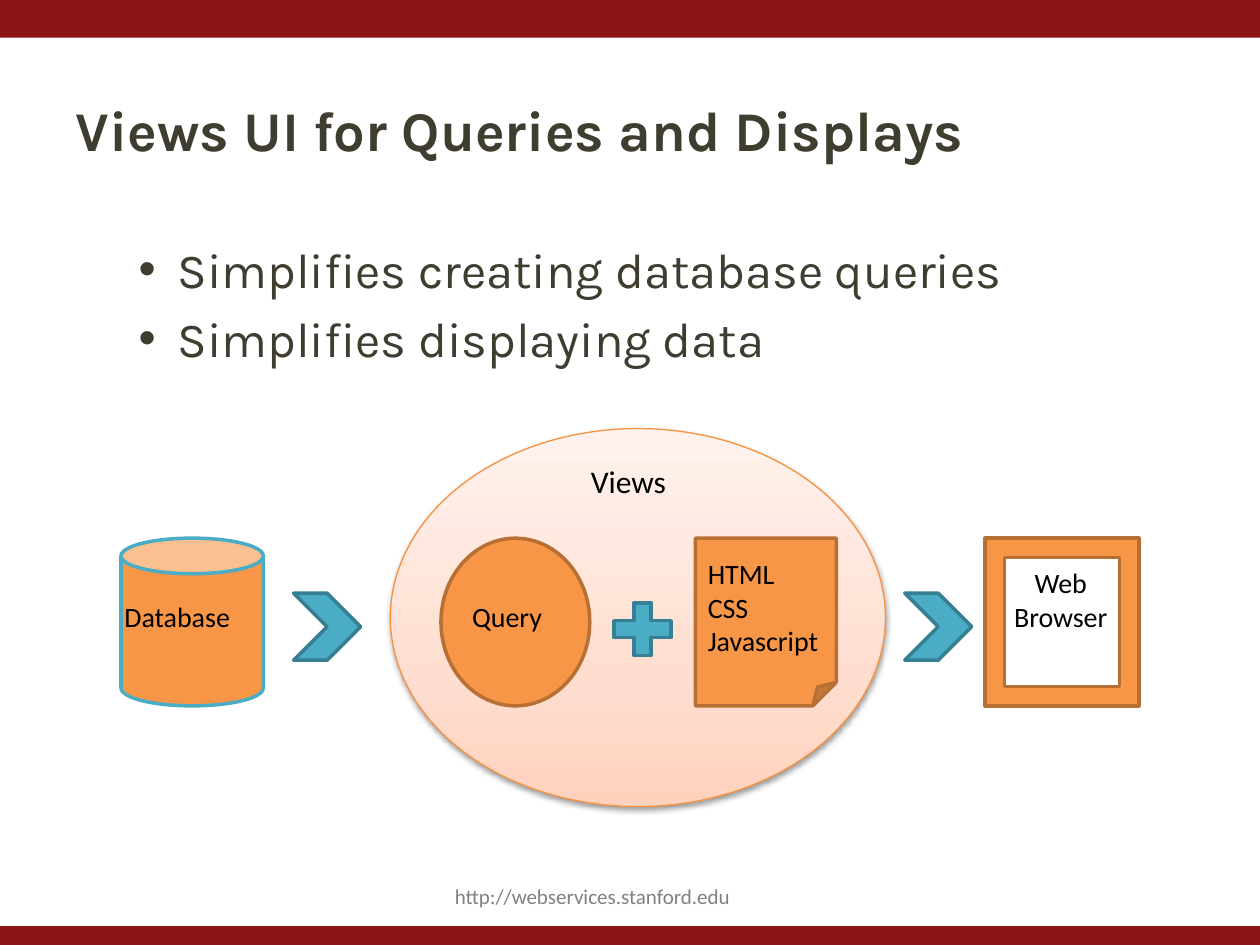
from lxml import etree
from pptx import Presentation
from pptx.dml.color import RGBColor
from pptx.enum import shapes, text
from pptx.oxml import parse_xml
from pptx.oxml.ns import nsdecls, qn
from pptx.util import Cm, Pt

CARDINAL = RGBColor(0x8C, 0x15, 0x15)
CHARCOAL = RGBColor(0x3F, 0x3C, 0x30)
GREY = RGBColor(0x80, 0x80, 0x80)
BLACK = RGBColor(0, 0, 0)
ORANGE = RGBColor(0xF7, 0x96, 0x46)
BROWN = RGBColor(0xB7, 0x6F, 0x34)
RIM = RGBColor(0xF6, 0x92, 0x40)
TEAL = RGBColor(0x4B, 0xAC, 0xC6)
DARK_TEAL = RGBColor(0x37, 0x7F, 0x92)
PEACH_STOPS = [(0, RGBColor(0xFF, 0xD2, 0xBD)),
               (35, RGBColor(0xFF, 0xDE, 0xD0)),
               (100, RGBColor(0xFF, 0xF2, 0xED))]

KIND = shapes.MSO_SHAPE
LEFT, CENTER = text.PP_ALIGN.LEFT, text.PP_ALIGN.CENTER
STAGE_TOP, STAGE_HEIGHT = 10.85, 3.38
SYMBOL_TOP = 11.96


def write(frame, lines, size, color=BLACK, font="Calibri", bold=False,
          align=LEFT, bullet=False):
    """Fill a text frame with one paragraph per line."""
    for index, line in enumerate(lines):
        para = frame.paragraphs[0] if index == 0 else frame.add_paragraph()
        para.text = line
        para.alignment = align
        if bullet:
            para.level = 1
            props = para._p.get_or_add_pPr()
            props.set("marL", str(Cm(2.06)))
            props.set("indent", str(Cm(-0.79)))
            if index:
                space = etree.SubElement(props, qn("a:spcBef"))
                etree.SubElement(space, qn("a:spcPct")).set("val", "20000")
            else:
                para.space_before = Pt(0)
            etree.SubElement(props, qn("a:buFont")).set("typeface", "Arial")
            etree.SubElement(props, qn("a:buChar")).set("char", "•")
        para.font.size = Pt(size)
        para.font.name = font
        para.font.bold = bold
        para.font.color.rgb = color


def fill_placeholder(holder, box, lines, anchor, **style):
    holder.left, holder.top, holder.width, holder.height = map(Cm, box)
    frame = holder.text_frame
    frame.auto_size = text.MSO_AUTO_SIZE.NONE
    frame.vertical_anchor = anchor
    write(frame, lines, color=CHARCOAL, font="Karla", **style)


def add_label(slide, box, lines, size=16, wrap=False, **style):
    frame = slide.shapes.add_textbox(*map(Cm, box)).text_frame
    frame.word_wrap = wrap
    frame.auto_size = text.MSO_AUTO_SIZE.SHAPE_TO_FIT_TEXT
    write(frame, lines, size, **style)


def add_block(slide, kind, box, fill, line=None, weight=2):
    block = slide.shapes.add_shape(kind, *map(Cm, box))
    block.shadow.inherit = False
    block.fill.solid()
    block.fill.fore_color.rgb = fill
    if line is None:
        block.line.fill.background()
    else:
        block.line.color.rgb = line
        block.line.width = Pt(weight)
    return block


def add_views_oval(slide):
    """Large oval with a peach gradient and a soft shadow below."""
    oval = add_block(slide, KIND.OVAL, (7.87, 8.64, 9.98, 7.62),
                     ORANGE, RIM, 0.75)
    oval.fill.gradient()
    oval.fill.gradient_angle = 90
    props = oval._element.spPr
    stops = props.find(f".//{qn('a:gsLst')}")
    for stop in list(stops):
        stops.remove(stop)
    for position, color in PEACH_STOPS:
        stops.append(parse_xml(
            f'<a:gs {nsdecls("a")} pos="{position * 1000}">'
            f'<a:srgbClr val="{color}"/></a:gs>'))
    props.find(qn("a:effectLst")).append(parse_xml(
        f'<a:outerShdw {nsdecls("a")} blurRad="{Pt(3.1)}" dist="{Pt(1.6)}" '
        'dir="5400000" rotWithShape="0"><a:srgbClr val="000000">'
        '<a:alpha val="38000"/></a:srgbClr></a:outerShdw>'))


def main():
    deck = Presentation()
    deck.slide_width, deck.slide_height = Cm(25.4), Cm(19.05)
    slide = deck.slides.add_slide(deck.slide_layouts[1])

    # Page bands and footer
    for top, height in ((0, 0.76), (18.67, 0.38)):
        add_block(slide, KIND.RECTANGLE, (0, top, 25.4, height), CARDINAL)
    add_label(slide, (8.92, 17.68, 6.15, 0.76),
              ["http://webservices.stanford.edu"], size=12, color=GREY)

    # Title and bullets
    title, body = slide.placeholders
    fill_placeholder(title, (1.27, 1.37, 22.91, 2.46),
                     ["Views UI for Queries and Displays"],
                     text.MSO_ANCHOR.MIDDLE, size=32, bold=True)
    fill_placeholder(body, (1.27, 4.7, 22.91, 4.34),
                     ["Simplifies creating database queries",
                      "Simplifies displaying data"],
                     text.MSO_ANCHOR.TOP, size=28, bullet=True)

    # Views oval
    add_views_oval(slide)
    add_label(slide, (11.66, 9.19, 2.24, 1.02), ["Views"], size=18)

    # Stages from database to browser
    for kind, left, width, line in ((KIND.CAN, 2.44, 2.87, TEAL),
                                    (KIND.OVAL, 8.89, 3, BROWN),
                                    (KIND.FOLDED_CORNER, 14.02, 2.84, BROWN),
                                    (KIND.FRAME, 19.86, 3.1, BROWN)):
        add_block(slide, kind, (left, STAGE_TOP, width, STAGE_HEIGHT),
                  ORANGE, line)

    # Symbols between the stages
    for kind, left, width, height in ((KIND.MATH_PLUS, 12.17, 1.57, 1.45),
                                      (KIND.CHEVRON, 5.92, 1.35, 1.35),
                                      (KIND.CHEVRON, 18.24, 1.35, 1.35)):
        add_block(slide, kind, (left, SYMBOL_TOP, width, height),
                  TEAL, DARK_TEAL)

    # Stage labels
    add_label(slide, (2.26, SYMBOL_TOP, 3.02, 0.94), ["Database"], wrap=True)
    add_label(slide, (9.27, SYMBOL_TOP, 2.18, 0.94), ["Query"], wrap=True)
    add_label(slide, (14.02, 11.1, 3.07, 2.31), ["HTML", "CSS", "Javascript"])
    add_label(slide, (20.09, 11.28, 2.59, 1.63), ["Web", "Browser"],
              align=CENTER)

    deck.save("out.pptx")


if __name__ == "__main__":
    main()
